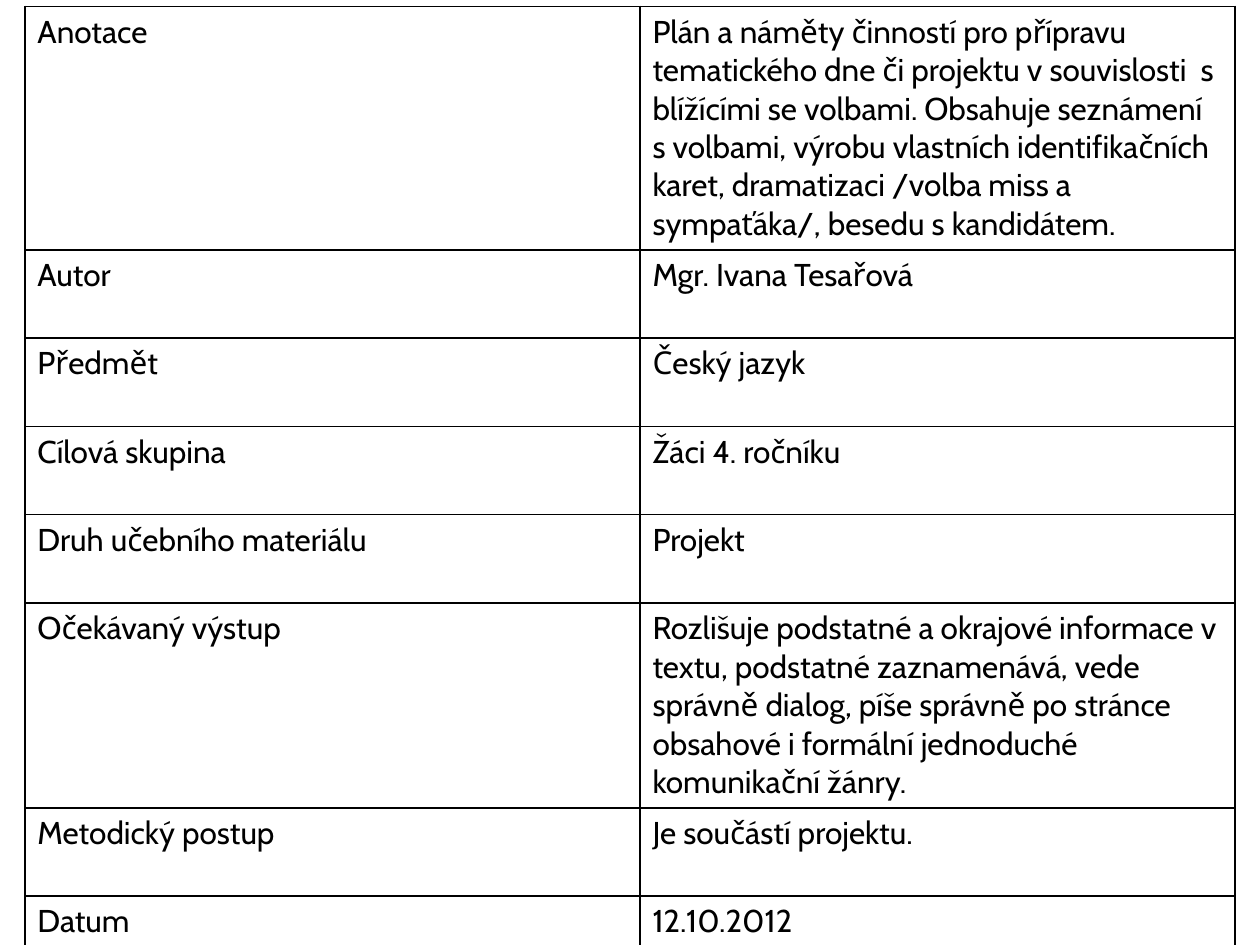
from lxml.etree import SubElement
from pptx import Presentation
from pptx.dml.color import RGBColor
from pptx.oxml.ns import qn
from pptx.util import Cm, Pt

# Content
ROWS = [
    ("Anotace",
     "Plán a náměty činností pro přípravu tematického dne či projektu "
     "v souvislosti  s blížícími se volbami. Obsahuje seznámení s volbami, "
     "výrobu vlastních identifikačních karet, dramatizaci /volba miss a "
     "sympaťáka/, besedu s kandidátem."),
    ("Autor", "Mgr. Ivana Tesařová"),
    ("Předmět", "Český jazyk"),
    ("Cílová skupina", "Žáci 4. ročníku"),
    ("Druh učebního materiálu", "Projekt"),
    ("Očekávaný výstup",
     "Rozlišuje podstatné a okrajové informace v textu, podstatné "
     "zaznamenává, vede správně dialog, píše správně po stránce obsahové "
     "i formální jednoduché komunikační žánry."),
    ("Metodický postup", "Je součástí projektu."),
    ("Datum", "12.10.2012"),
]
WIDTHS = (12.4, 12)
FIRST, OTHER = 3.71, 1.78
INK = "000000"


def color(code):
    return RGBColor.from_string(code)


def border(cell):
    props = cell._tc.get_or_add_tcPr()
    for at, side in enumerate(("a:lnL", "a:lnR", "a:lnT", "a:lnB")):
        line = SubElement(props, qn(side), w=str(Pt(1)))
        fill = SubElement(line, qn("a:solidFill"))
        SubElement(fill, qn("a:srgbClr"), val=INK)
        props.insert(at, line)  # borders come before the fill


def write(cell, text):
    cell.text_frame.text = text
    cell.fill.background()
    border(cell)
    font = cell.text_frame.paragraphs[0].runs[0].font
    font.name, font.size, font.bold = "Cabin", Pt(18), False
    font.color.rgb = color(INK)


def main():
    # Slide
    deck = Presentation()
    deck.slide_width, deck.slide_height = Cm(25.4), Cm(19.05)
    slide = deck.slides.add_slide(deck.slide_layouts[6])

    # Table
    frame = slide.shapes.add_table(len(ROWS), len(WIDTHS), Cm(0.5), Cm(0.13),
                                   Cm(sum(WIDTHS)), Cm(19.58))
    table = frame.table
    table.first_row = table.horz_banding = False
    for col, width in zip(table.columns, WIDTHS):
        col.width = Cm(width)

    # Rows grow with their text
    for i, texts in enumerate(ROWS):
        table.rows[i].height = Cm(OTHER if i else FIRST)
        for j, text in enumerate(texts):
            write(table.cell(i, j), text)
    frame.height = Cm(19.58)

    deck.save("out.pptx")


if __name__ == "__main__":
    main()
